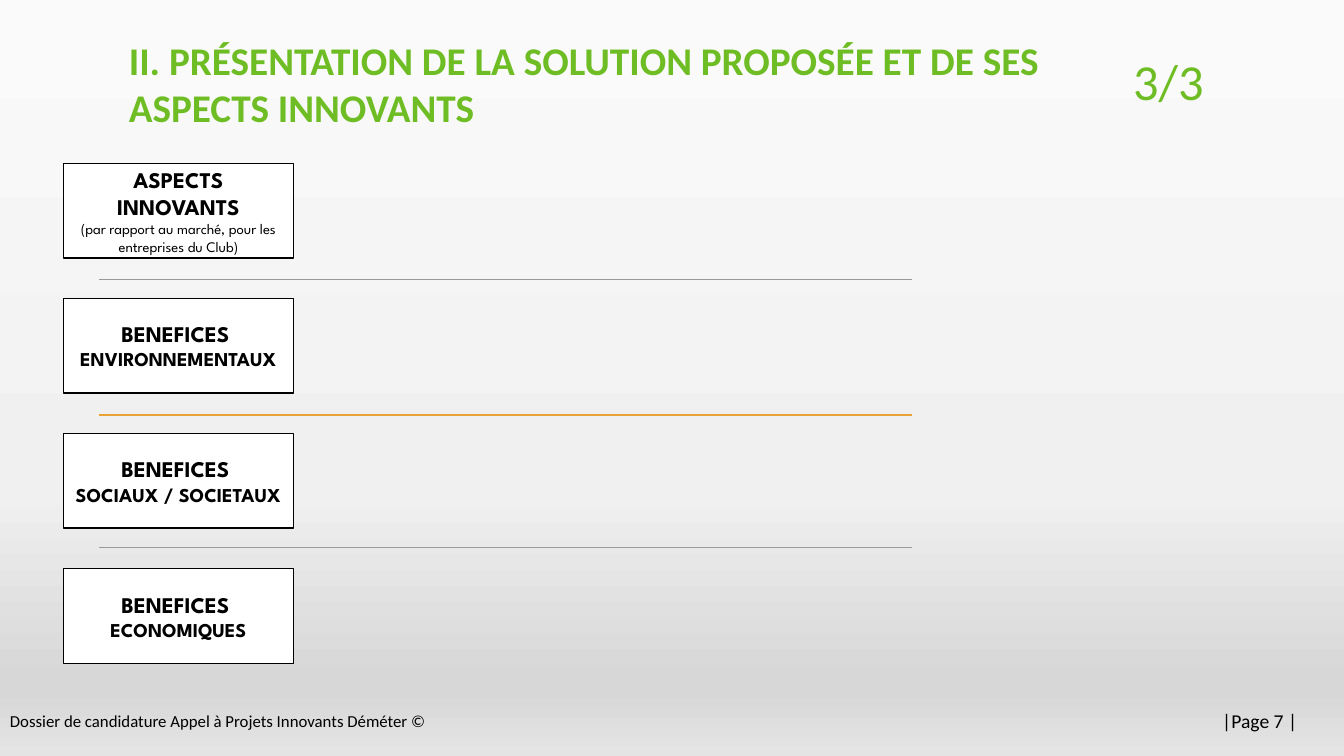
from lxml import etree
from pptx import Presentation
from pptx.dml.color import RGBColor
from pptx.enum import shapes, text
from pptx.oxml import ns
from pptx.util import Inches, Pt

GREEN, ORANGE, GREY, BLACK, WHITE = "6FBD24", "E9A236", "999999", "000000", "FFFFFF"
BACKDROP = [(0, "FAFAFA"), (65, "F0F0F0"), (90, "D7D7D7"), (91, "D7D7D7"), (100, "E4E4E4")]
BENEFITS = ["ENVIRONNEMENTAUX", "SOCIAUX / SOCIETAUX", "ECONOMIQUES"]
SEPARATORS = [(2.77, GREY, 0.75), (4.12, ORANGE, 1.5), (5.43, GREY, 0.75)]
CARD_TOP, CARD_STEP = 1.62, 1.34


def rgb(value):
    return RGBColor.from_string(value)


class Canvas:
    body_font = "Calibri"
    card_font = "League Spartan"

    def __init__(self, page):
        self.page = page

    def background(self, stops):
        fill = self.page.background.fill
        fill.gradient()
        fill.gradient_angle = 270
        stop_list = self.page.element.find(".//" + ns.qn("a:gsLst"))
        for stop in list(stop_list):
            stop_list.remove(stop)
        for percent, color in stops:
            stop = etree.SubElement(stop_list, ns.qn("a:gs"), pos=str(percent * 1000))
            etree.SubElement(stop, ns.qn("a:srgbClr"), val=color)

    def style(self, para, font, size, color, bold=False):
        for span in para.runs:
            span.font.name = font
            span.font.size = Pt(size)
            span.font.bold = bold
            span.font.color.rgb = rgb(color)

    def label(self, words, place, size, color=BLACK, bold=False, wrap=True,
              anchor=text.MSO_ANCHOR.TOP):
        box = self.page.shapes.add_textbox(*map(Inches, place))
        frame = box.text_frame
        frame.word_wrap = wrap
        frame.vertical_anchor = anchor
        frame.text = words
        self.style(frame.paragraphs[0], self.body_font, size, color, bold)

    def card(self, top, heading, detail, detail_size, detail_bold):
        box = self.page.shapes.add_shape(
            shapes.MSO_SHAPE.RECTANGLE, Inches(0.63), Inches(top), Inches(2.28), Inches(0.94))
        box.shadow.inherit = False
        box.fill.solid()
        box.fill.fore_color.rgb = rgb(WHITE)
        box.line.color.rgb = rgb(BLACK)
        box.line.width = Pt(1)
        frame = box.text_frame
        frame.word_wrap = True
        frame.vertical_anchor = text.MSO_ANCHOR.MIDDLE
        frame.text = f"{heading}\n{detail}"
        looks = [(16, True), (detail_size, detail_bold)]
        for para, (size, bold) in zip(frame.paragraphs, looks):
            para.alignment = text.PP_ALIGN.CENTER
            self.style(para, self.card_font, size, BLACK, bold)

    def separator(self, top, color, width):
        line = self.page.shapes.add_connector(
            shapes.MSO_CONNECTOR.STRAIGHT, Inches(0.98), Inches(top), Inches(9.05), Inches(top))
        line.line.color.rgb = rgb(color)
        line.line.width = Pt(width)
        etree.SubElement(line.element.spPr, ns.qn("a:effectLst"))


def main():
    deck = Presentation()
    deck.slide_width, deck.slide_height = Inches(13.33), Inches(7.5)
    canvas = Canvas(deck.slides.add_slide(deck.slide_layouts[6]))
    canvas.background(BACKDROP)
    canvas.label(" |Page 7 |", (11.98, 6.98, 1.35, 0.34), 14)
    canvas.label("Dossier de candidature Appel à Projets Innovants Déméter ©",
                 (0, 6.95, 4.82, 0.4), 12, anchor=text.MSO_ANCHOR.MIDDLE)
    canvas.card(CARD_TOP, "ASPECTS INNOVANTS",
                "(par rapport au marché, pour les entreprises du Club)", 10.5, False)
    for row, benefit in enumerate(BENEFITS, 1):
        canvas.card(CARD_TOP + row * CARD_STEP, "BENEFICES ", benefit, 14, True)
    for top, color, width in SEPARATORS:
        canvas.separator(top, color, width)
    canvas.label("II. PRÉSENTATION DE LA SOLUTION PROPOSÉE ET DE SES ASPECTS INNOVANTS",
                 (1.18, 0.31, 9.49, 1.06), 28, GREEN, bold=True)
    canvas.label("3/3", (11.14, 0.45, 0.91, 0.71), 36, GREEN, wrap=False)
    deck.save("out.pptx")


if __name__ == "__main__":
    main()
